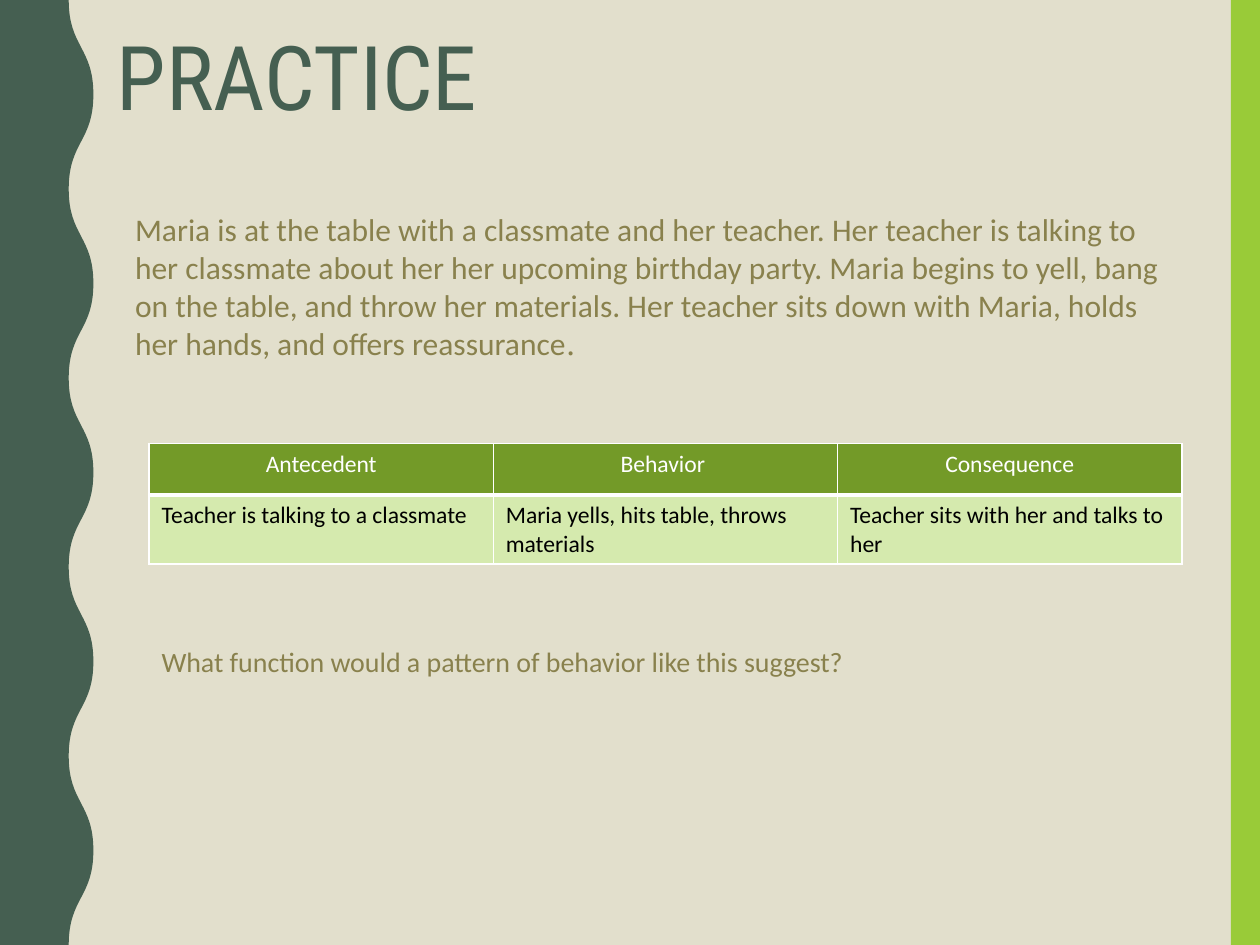
"""Build the PRACTICE slide: a scenario, its behavior table and a question."""
import lxml.etree
import pptx
import pptx.dml.color
import pptx.enum.shapes
import pptx.enum.text
import pptx.oxml.ns
import pptx.util

Pt = pptx.util.Pt
ALIGN = pptx.enum.text.PP_ALIGN
qn = pptx.oxml.ns.qn

TITLE = "PRACTICE"
SCENARIO = (
    "Maria is at the table with a classmate and her teacher. Her teacher is talking to "
    "her classmate about her her upcoming birthday party. Maria begins to yell, bang on "
    "the table, and throw her materials. Her teacher sits down with Maria, holds her "
    "hands, and offers reassurance"
)
QUESTION = "What function would a pattern of behavior like this suggest?"
ROWS = [
    ["Antecedent", "Behavior ", "Consequence"],
    [
        "Teacher is talking to a classmate",
        "Maria yells, hits table, throws materials",
        "Teacher sits with her and talks to her",
    ],
]

THEME = {
    "background": "E2DFCC", "dark": "455F51", "accent": "99CB38", "text": "89814D",
    "header": "739A28", "body": "D5EAAE", "white": "FFFFFF", "black": "000000",
    "title_font": "Roboto Condensed", "font": "Calibri", "stop_font": "League Spartan",
    "title_size": 51, "scenario_size": 18, "question_size": 16, "table_size": 13.5,
}
WIDTH, HEIGHT = 720, 540
STRIPE_LEFT = 703.3
WAVE_INNER, WAVE_OUTER, WAVE_STEPS = 39.3, 53.4, 10
TABLE_LEFT, TABLE_TOP, COLUMN_WIDTH = 85.2, 253.5, 196.7
ROW_HEIGHTS = [29.3, 24]
RULE, HEAVY_RULE = 1, 3


def color(name):
    return pptx.dml.color.RGBColor.from_string(THEME[name])


def write(paragraph, text, *, size, tone="text", font="font", align=None, spacing=None):
    run = paragraph.add_run()
    run.text = text
    run.font.size = Pt(size)
    run.font.name = THEME[font]
    run.font.color.rgb = color(tone)
    if align is not None:
        paragraph.alignment = align
    if spacing is not None:
        paragraph.line_spacing = spacing


def add_text_box(slide, left, top, width, height):
    shape = slide.shapes.add_textbox(Pt(left), Pt(top), Pt(width), Pt(height))
    shape.text_frame.word_wrap = True
    return shape.text_frame.paragraphs[0]


def paint(shape, tone):
    shape.shadow.inherit = False
    shape.fill.solid()
    shape.fill.fore_color.rgb = color(tone)
    shape.line.fill.background()


def curve_segment(segment, start, end):
    middle = (start[1] + end[1]) // 2
    segment.tag = qn("a:cubicBezTo")
    segment.clear()
    for x, y in [(start[0], middle), (end[0], middle), end]:
        lxml.etree.SubElement(segment, qn("a:pt"), x=str(x), y=str(y))


def add_wave(slide):
    step = HEIGHT / WAVE_STEPS
    crests = [
        (Pt(WAVE_OUTER if index % 2 else WAVE_INNER), Pt(index * step))
        for index in range(WAVE_STEPS + 1)
    ]
    builder = slide.shapes.build_freeform(0, 0)
    builder.add_line_segments([*crests, (0, Pt(HEIGHT))])
    wave = builder.convert_to_shape()
    segments = list(wave._element.iter(qn("a:lnTo")))[1:]
    for segment, start, end in zip(segments, crests, crests[1:]):
        parent = segment.getparent()
        curve = lxml.etree.Element(qn("a:cubicBezTo"))
        parent.replace(segment, curve)
        curve_segment(curve, start, end)
    paint(wave, "dark")


def add_stripe(slide):
    stripe = slide.shapes.add_shape(
        pptx.enum.shapes.MSO_SHAPE.RECTANGLE,
        Pt(STRIPE_LEFT), 0, Pt(WIDTH - STRIPE_LEFT), Pt(HEIGHT),
    )
    paint(stripe, "accent")


def set_borders(cell, **widths):
    properties = cell._tc.get_or_add_tcPr()
    for side in "LRTB":
        width = str(Pt(widths.get(side, RULE)))
        line = lxml.etree.SubElement(properties, qn("a:ln" + side), w=width)
        fill = lxml.etree.SubElement(line, qn("a:solidFill"))
        lxml.etree.SubElement(fill, qn("a:srgbClr"), val=THEME["white"])


def add_behavior_table(slide):
    columns = len(ROWS[0])
    table = slide.shapes.add_table(
        len(ROWS), columns, Pt(TABLE_LEFT), Pt(TABLE_TOP),
        Pt(COLUMN_WIDTH * columns), Pt(sum(ROW_HEIGHTS)),
    ).table
    for column in table.columns:
        column.width = Pt(COLUMN_WIDTH)
    for index, texts in enumerate(ROWS):
        table.rows[index].height = Pt(ROW_HEIGHTS[index])
        header = index == 0
        for cell, text in zip(table.rows[index].cells, texts):
            set_borders(cell, **{"B" if header else "T": HEAVY_RULE})
            cell.fill.solid()
            cell.fill.fore_color.rgb = color("header" if header else "body")
            write(
                cell.text_frame.paragraphs[0], text, size=THEME["table_size"],
                tone="white" if header else "black",
                align=ALIGN.CENTER if header else ALIGN.LEFT,
            )


def main():
    presentation = pptx.Presentation()
    presentation.slide_width, presentation.slide_height = Pt(WIDTH), Pt(HEIGHT)
    slide = presentation.slides.add_slide(presentation.slide_layouts[6])
    slide.background.fill.solid()
    slide.background.fill.fore_color.rgb = color("background")

    add_stripe(slide)
    add_wave(slide)
    scenario = add_text_box(slide, 70.1, 116.6, 605.5, 94.3)
    write(scenario, SCENARIO, size=THEME["scenario_size"])
    write(scenario, ".", size=THEME["scenario_size"], font="stop_font")
    add_behavior_table(slide)
    question = add_text_box(slide, TABLE_LEFT, 365, 409, 26.6)
    write(question, QUESTION, size=THEME["question_size"])
    title = add_text_box(slide, 59.6, 15.4, 601, 117.4)
    write(title, TITLE, size=THEME["title_size"], tone="dark", font="title_font", spacing=0.9)

    presentation.save("out.pptx")


if __name__ == "__main__":
    main()
